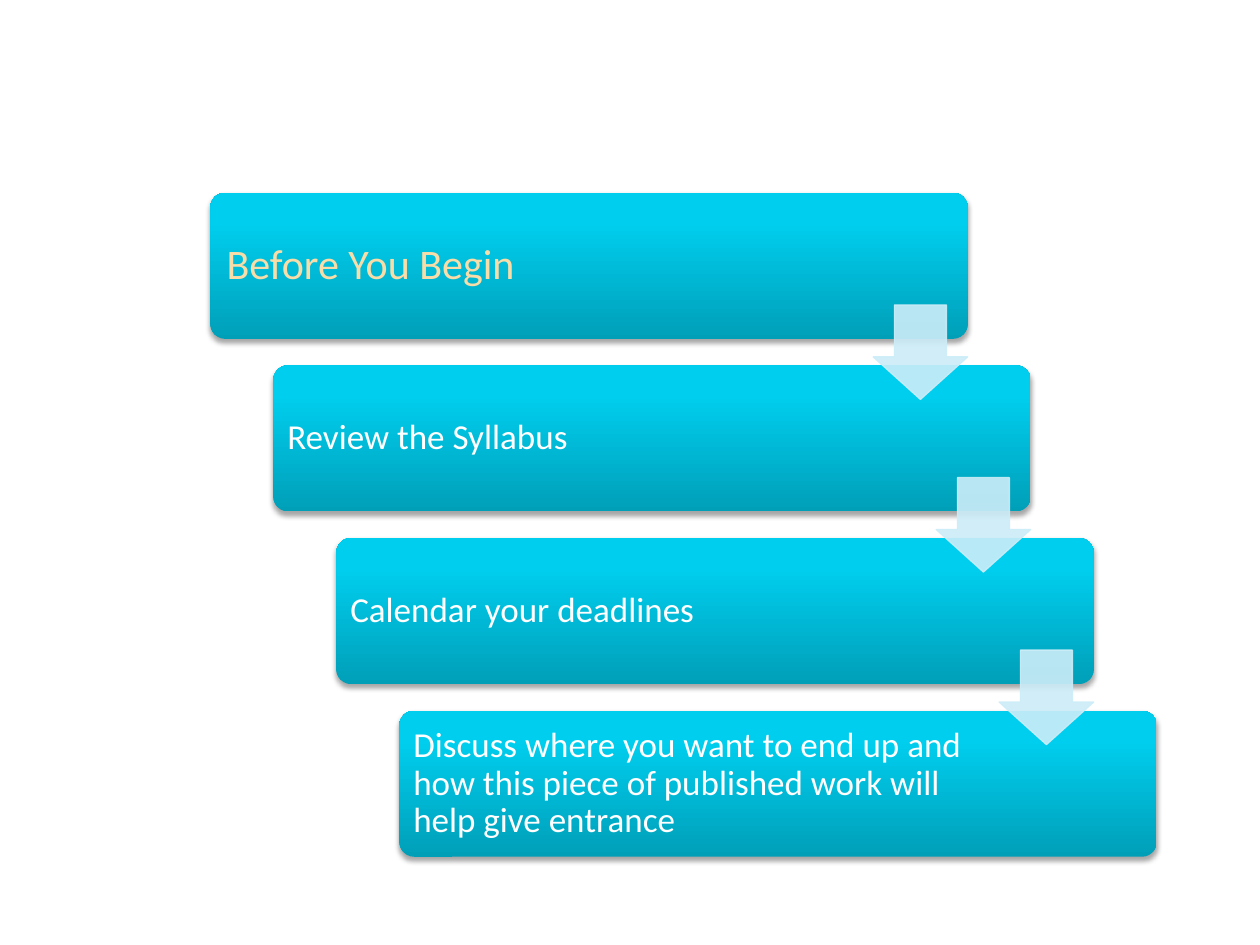
from lxml.etree import SubElement
from pptx import Presentation
from pptx.dml.color import RGBColor
from pptx.enum.shapes import MSO_SHAPE as Shape
from pptx.enum.text import MSO_ANCHOR as Anchor
from pptx.oxml import parse_xml
from pptx.oxml.ns import nsdecls, qn
from pptx.util import Inches, Pt

DEEP_TEAL = RGBColor(0x00, 0x9F, 0xB8)
CYAN = RGBColor(0x00, 0xCE, 0xEE)
BRIGHT_CYAN = RGBColor(0x00, 0xCF, 0xEF)
PALE_BLUE = RGBColor(0xCC, 0xED, 0xF8)
SAND = RGBColor(0xF9, 0xDD, 0xA8)
WHITE = RGBColor(0xFF, 0xFF, 0xFF)
BLACK = RGBColor(0x00, 0x00, 0x00)

FONT = "Calibri"
GRADIENT = ((0, DEEP_TEAL), (80, CYAN), (100, BRIGHT_CYAN))

# Staircase: first step's corner, step size and the offset to the next step
LEFT, TOP = 1.67, 1.53
WIDTH, HEIGHT = 6.01, 1.16
SHIFT, DROP = 0.5, 1.37
PAD = 0.03
ARROW = 0.75

# Text, size, colour, inset, text width
STEPS = (
    ("Before You Begin", 24, SAND, 0.1, 4.66),
    ("Review the Syllabus", 20, WHITE, 0.08, 4.68),
    ("Calendar your deadlines", 20, WHITE, 0.08, 4.69),
    ("Discuss where you want to end up and how this piece of published work "
     "will help give entrance", 20, WHITE, 0.08, 4.68),
)


def add_panel(page, left, top):
    panel = page.shapes.add_shape(Shape.ROUNDED_RECTANGLE, Inches(left), Inches(top),
                                  Inches(WIDTH), Inches(HEIGHT))
    panel.adjustments[0] = 0.1
    panel.line.fill.background()
    stops = "".join(f'<a:gs pos="{share * 1000}"><a:srgbClr val="{color}"/></a:gs>'
                    for share, color in GRADIENT)
    properties = panel._element.spPr
    properties.find(qn("a:ln")).addprevious(parse_xml(
        f'<a:gradFill {nsdecls("a")} rotWithShape="1"><a:gsLst>{stops}</a:gsLst>'
        '<a:lin ang="16200000" scaled="0"/></a:gradFill>'))
    properties.append(parse_xml(
        f'<a:effectLst {nsdecls("a")}><a:outerShdw blurRad="{Pt(3.1)}" dist="{Pt(1.8)}" '
        f'dir="5400000" rotWithShape="0"><a:srgbClr val="{BLACK}">'
        '<a:alpha val="35000"/></a:srgbClr></a:outerShdw></a:effectLst>'))


def add_label(page, left, top, text, size, color, inset, width):
    box = page.shapes.add_textbox(Inches(left + PAD), Inches(top + PAD),
                                  Inches(width), Inches(HEIGHT - 2 * PAD))
    frame = box.text_frame
    frame.word_wrap = True
    frame.vertical_anchor = Anchor.MIDDLE
    frame.margin_left = frame.margin_right = Inches(inset)
    frame.margin_top = frame.margin_bottom = Inches(inset)
    para = frame.paragraphs[0]
    para.text = text
    para.line_spacing = 0.9
    para.font.name = FONT
    para.font.size = Pt(size)
    para.font.color.rgb = color


def add_step_arrow(page, left, top):
    """Place an arrow from the step at left, top down to the next one."""
    middle = top + (HEIGHT + DROP) / 2
    arrow = page.shapes.add_shape(Shape.DOWN_ARROW, Inches(left + WIDTH - ARROW),
                                  Inches(middle - ARROW / 2), Inches(ARROW), Inches(ARROW))
    arrow.shadow.inherit = False
    arrow.adjustments[0] = 0.55
    arrow.adjustments[1] = 0.45
    arrow.fill.solid()
    arrow.fill.fore_color.rgb = PALE_BLUE
    arrow.line.color.rgb = PALE_BLUE
    arrow.line.width = Pt(0.75)
    for color in arrow._element.spPr.iter(qn("a:srgbClr")):
        SubElement(color, qn("a:alpha")).set("val", "90000")


def add_staircase(page, left, top):
    corners = [(left + i * SHIFT, top + i * DROP) for i in range(len(STEPS))]
    for corner, step in zip(corners, STEPS):
        add_panel(page, *corner)
        add_label(page, *corner, *step)
    for corner in corners[:-1]:
        add_step_arrow(page, *corner)


def main():
    deck = Presentation()
    deck.slide_width, deck.slide_height = Inches(10), Inches(7.5)
    page = deck.slides.add_slide(deck.slide_layouts[6])
    add_staircase(page, LEFT, TOP)
    deck.save("out.pptx")


if __name__ == "__main__":
    main()
